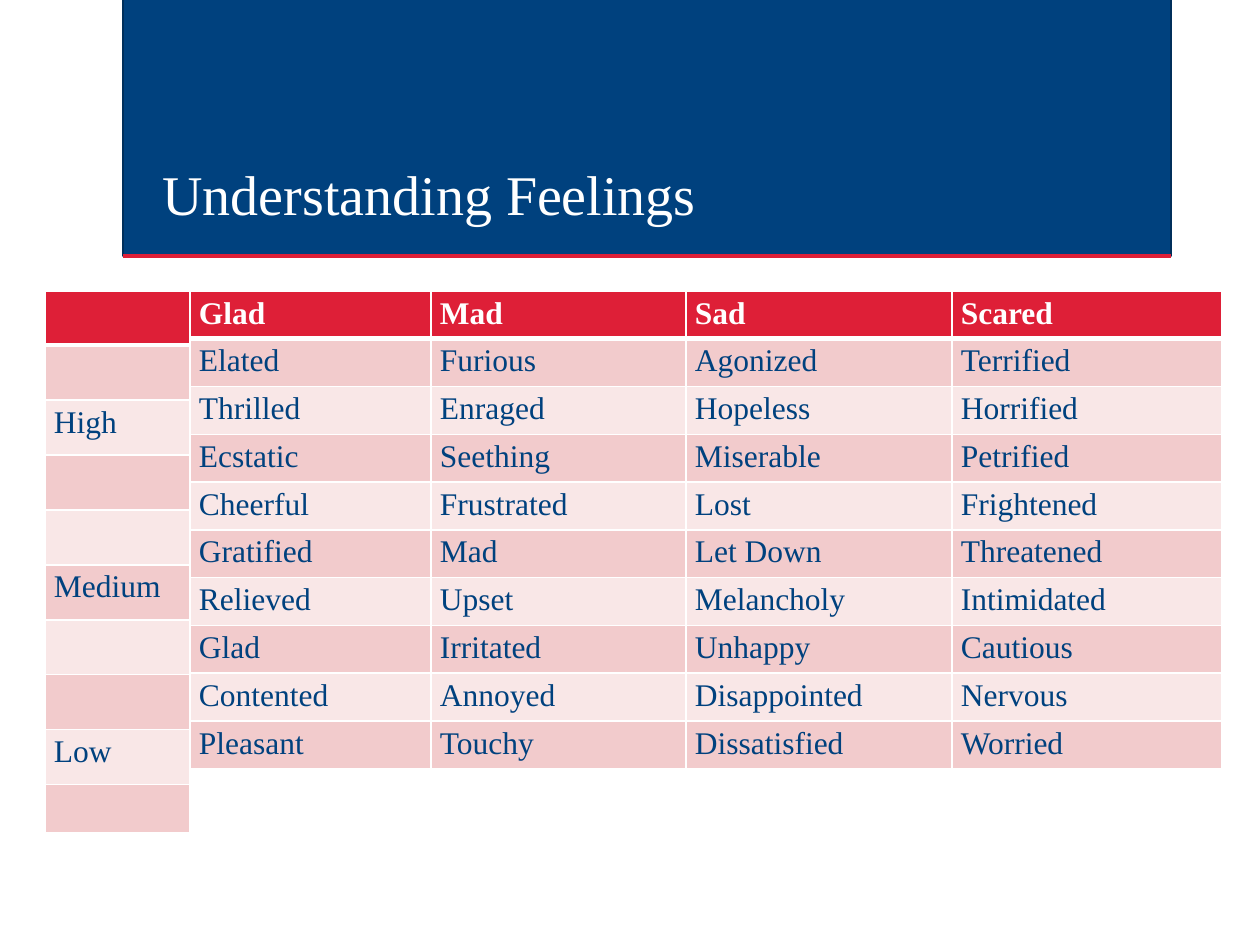
from lxml import etree
from pptx import Presentation
from pptx.dml.color import RGBColor
from pptx.enum.shapes import MSO_CONNECTOR as CONN, MSO_SHAPE as SHAPE
from pptx.enum.text import MSO_ANCHOR as ANCHOR
from pptx.oxml.ns import qn
from pptx.util import Pt

PX = 914400 / 126
FONT = "Times New Roman"
WHITE = RGBColor(0xFF, 0xFF, 0xFF)
NAVY = RGBColor(0x00, 0x41, 0x7E)
DARK_NAVY = RGBColor(0x00, 0x2F, 0x5B)
RED = RGBColor(0xDE, 0x1F, 0x37)
PINK = RGBColor(0xF2, 0xCB, 0xCC)
PALE_PINK = RGBColor(0xF9, 0xE7, 0xE7)

FEELINGS = [
    ["Glad", "Mad", "Sad", "Scared"],
    ["Elated", "Furious", "Agonized", "Terrified"],
    ["Thrilled", "Enraged", "Hopeless", "Horrified"],
    ["Ecstatic", "Seething", "Miserable", "Petrified"],
    ["Cheerful", "Frustrated", "Lost", "Frightened"],
    ["Gratified", "Mad", "Let Down", "Threatened"],
    ["Relieved", "Upset", "Melancholy", "Intimidated"],
    ["Glad", "Irritated", "Unhappy", "Cautious"],
    ["Contented", "Annoyed", "Disappointed", "Nervous"],
    ["Pleasant", "Touchy", "Dissatisfied", "Worried"],
]
LEVELS = [[t] for t in ("", "", "High", "", "", "Medium", "", "", "Low", "")]


def px(n):
    return round(n * PX)


def set_attrs(obj, values):
    for name, value in values.items():
        setattr(obj, name, value)


def add_run(p, text, size, color, bold=False):
    r = p.add_run()
    r.text = text
    set_attrs(r.font, {"name": FONT, "size": Pt(size), "bold": bold})
    r.font.color.rgb = color


def add_banner(slide, x, y, w, h):
    sp = slide.shapes.add_shape(SHAPE.RECTANGLE, px(x), px(y), px(w), px(h))
    sp.shadow.inherit = False
    sp.fill.solid()
    sp.fill.fore_color.rgb = NAVY
    sp.line.color.rgb = DARK_NAVY
    sp.line.width = Pt(1.25)


def add_rule(slide, x1, x2, y):
    line = slide.shapes.add_connector(CONN.STRAIGHT, px(x1), px(y), px(x2), px(y))
    line.line.color.rgb = RED
    line.line.width = Pt(2.5)
    etree.SubElement(line._element.spPr, qn("a:effectLst"))


def add_title(slide, text, x, y, w, h):
    tf = slide.shapes.add_textbox(px(x), px(y), px(w), px(h)).text_frame
    set_attrs(tf, {"word_wrap": True, "vertical_anchor": ANCHOR.BOTTOM})
    p = tf.paragraphs[0]
    p.line_spacing = 0.9
    add_run(p, text, 32, WHITE)


def add_border(cell, side, width):
    tc_pr = cell._tc.get_or_add_tcPr()
    ln = etree.SubElement(tc_pr, qn(f"a:ln{side}"), w=str(Pt(width)))
    fill = etree.SubElement(ln, qn("a:solidFill"))
    etree.SubElement(fill, qn("a:srgbClr"), val=str(WHITE))


def format_cell(cell, text, row):
    header = row == 0
    set_attrs(cell, {"margin_left": px(9), "margin_right": px(9),
                     "margin_top": px(5), "margin_bottom": px(5)})
    # The edge below the header is thicker than the others
    widths = {"L": 1, "R": 1, "T": 3 if row == 1 else 1, "B": 3 if header else 1}
    for side, width in widths.items():
        add_border(cell, side, width)
    cell.fill.solid()
    cell.fill.fore_color.rgb = RED if header else PINK if row % 2 else PALE_PINK
    add_run(cell.text_frame.paragraphs[0], text, 18, WHITE if header else NAVY, header)


def add_grid(slide, rows, x, y, widths, heights):
    frame = slide.shapes.add_table(len(rows), len(widths), px(x), px(y),
                                   px(sum(widths)), px(sum(heights)))
    table = frame.table
    for column, width in zip(table.columns, widths):
        column.width = px(width)
    for i, (row, height) in enumerate(zip(rows, heights)):
        table.rows[i].height = px(height)
        for j, text in enumerate(row):
            format_cell(table.cell(i, j), text, i)


def main():
    prs = Presentation()
    prs.slide_width, prs.slide_height = px(1260), px(945)
    slide = prs.slides.add_slide(prs.slide_layouts[6])

    # Title band
    add_banner(slide, 123, -3, 1048, 259)
    add_rule(slide, 123, 1171, 256)
    add_title(slide, "Understanding Feelings", 150, 111, 993, 123)

    # Feelings, with their intensity levels on the left
    add_grid(slide, FEELINGS, 190, 291, [241, 255, 266, 270], [47] * 8 + [48] * 2)
    add_grid(slide, LEVELS, 45, 291, [145], [54] + [55] * 8 + [47])

    prs.save("out.pptx")


if __name__ == "__main__":
    main()
